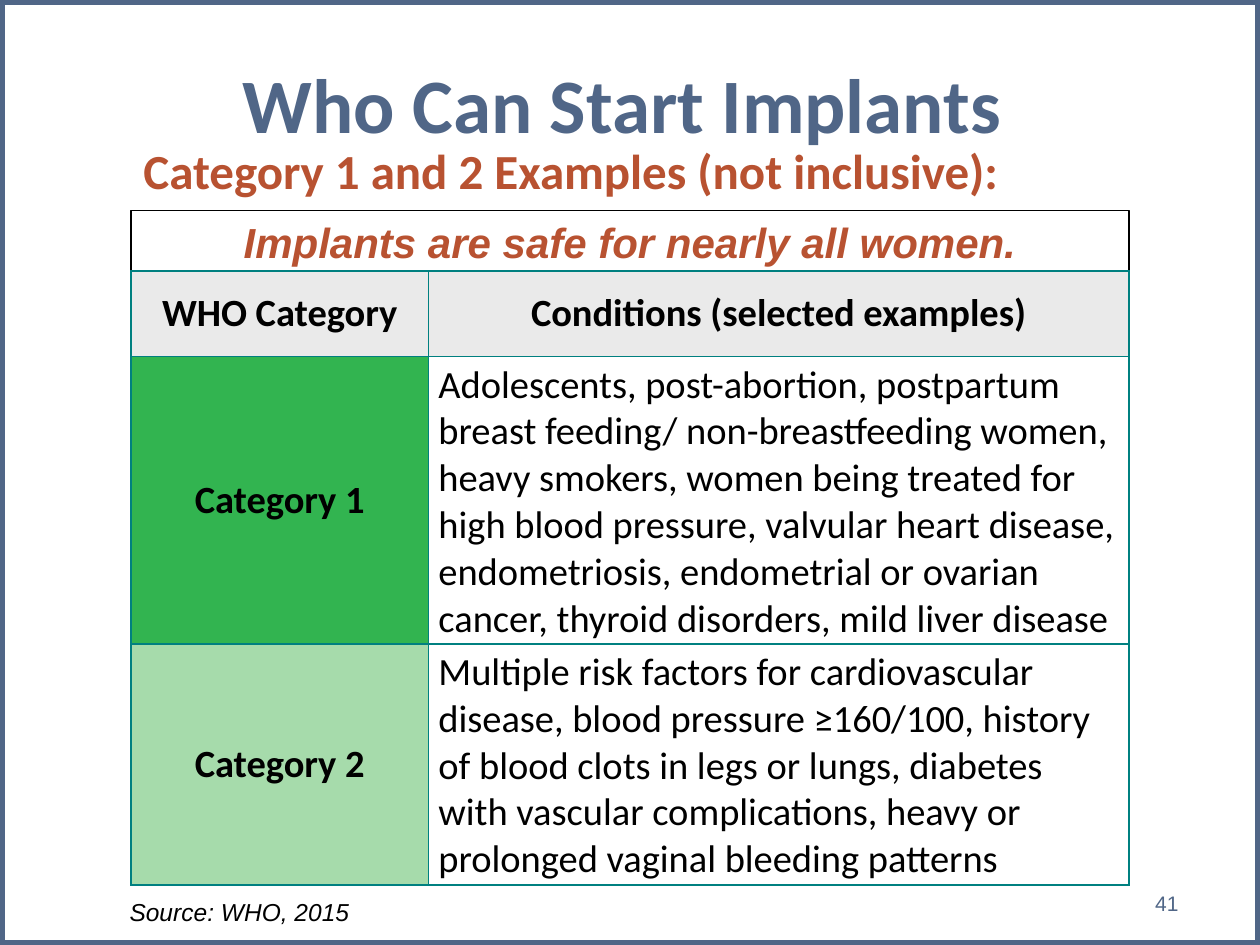
"""Build the slide on who can start implants."""
from dataclasses import dataclass

from lxml import etree
from pptx import Presentation
from pptx.dml.color import RGBColor
from pptx.enum.shapes import MSO_SHAPE
from pptx.enum.text import MSO_ANCHOR, PP_ALIGN
from pptx.oxml.ns import qn
from pptx.util import Inches, Pt

LEFT, CENTER = PP_ALIGN.LEFT, PP_ALIGN.CENTER
TOP, MIDDLE = MSO_ANCHOR.TOP, MSO_ANCHOR.MIDDLE
RECT = MSO_SHAPE.RECTANGLE
BLUE, RUST, BLACK, TEAL = "506687", "B85231", "000000", "008080"
EDGE, WIDTH = 1.04, 7.92


@dataclass
class Style:
    size: float
    color: str = BLACK
    font: str = "Calibri"
    bold: bool = False
    italic: bool = False
    align: PP_ALIGN = LEFT
    anchor: MSO_ANCHOR = TOP
    spacing: float = 1.0


@dataclass
class Row:
    height: float
    label: str
    text: str
    fill: str


ROWS = [
    Row(2.28, "Category 1",
        "Adolescents, post-abortion, postpartum breast feeding/ non-breastfeeding "
        "women, heavy smokers, women being treated for high blood pressure, "
        "valvular heart disease, endometriosis, endometrial or ovarian cancer, "
        "thyroid disorders, mild liver disease", "32B450"),
    Row(1.91, "Category 2",
        "Multiple risk factors for cardiovascular disease, blood pressure "
        "≥160/100, history of blood clots in legs or lungs, diabetes with vascular "
        "complications, heavy or prolonged vaginal bleeding patterns", "A6DBAB"),
]
HEAD = Style(22, bold=True, align=CENTER, anchor=MIDDLE)
BODY = Style(22, anchor=MIDDLE)


def rgb(code: str) -> RGBColor:
    return RGBColor.from_string(code)


def write(frame, text: str, style: Style) -> None:
    frame.text = text
    frame.word_wrap = True
    frame.vertical_anchor = style.anchor
    para = frame.paragraphs[0]
    para.alignment = style.align
    para.line_spacing = style.spacing
    font = para.runs[0].font
    font.name, font.size = style.font, Pt(style.size)
    font.bold, font.italic = style.bold, style.italic
    font.color.rgb = rgb(style.color)


def add_text(slide, box: tuple, text: str, style: Style) -> None:
    shape = slide.shapes.add_textbox(*map(Inches, box))
    write(shape.text_frame, text, style)


def add_box(slide, box: tuple, color: str, width: float):
    shape = slide.shapes.add_shape(RECT, *map(Inches, box))
    shape.shadow.inherit = False
    shape.fill.background()
    shape.line.color.rgb = rgb(color)
    shape.line.width = Pt(width)
    return shape


def set_cell(cell, text: str, style: Style, fill: str = "") -> None:
    cell.margin_left = cell.margin_right = Inches(0.08)
    cell.margin_top = cell.margin_bottom = Inches(0.04)
    write(cell.text_frame, text, style)
    cell.vertical_anchor = style.anchor
    props = cell._tc.get_or_add_tcPr()
    for side in ("lnL", "lnR", "lnT", "lnB"):
        line = etree.SubElement(props, qn(f"a:{side}"), w=str(Pt(1)))
        solid = etree.SubElement(line, qn("a:solidFill"))
        etree.SubElement(solid, qn("a:srgbClr"), val=TEAL)
    if fill:
        cell.fill.solid()
        cell.fill.fore_color.rgb = rgb(fill)
    else:
        cell.fill.background()


def add_grid(slide) -> None:
    heights = [0.68] + [row.height for row in ROWS]
    box = (EDGE, 2.15, WIDTH, sum(heights))
    table = slide.shapes.add_table(len(heights), 2, *map(Inches, box)).table
    table.first_row = table.horz_banding = False
    for col, width in zip(table.columns, (2.36, 5.56)):
        col.width = Inches(width)
    for line, height in zip(table.rows, heights):
        line.height = Inches(height)
    for col, text in enumerate(("WHO Category", "Conditions (selected examples)")):
        set_cell(table.cell(0, col), text, HEAD, "EAEAEA")
    for num, row in enumerate(ROWS, 1):
        set_cell(table.cell(num, 0), row.label, HEAD, row.fill)
        set_cell(table.cell(num, 1), row.text, BODY)


def main() -> None:
    deck = Presentation()
    deck.slide_width, deck.slide_height = Inches(10), Inches(7.5)
    slide = deck.slides.add_slide(deck.slide_layouts[5])
    title = slide.shapes.title
    title.left, title.top = Inches(0.44), Inches(0.19)
    title.width, title.height = Inches(9), Inches(1.25)
    write(title.text_frame, "Who Can Start Implants",
          Style(44, BLUE, bold=True, align=CENTER, anchor=MIDDLE))
    add_text(slide, (EDGE, 0.71, WIDTH, 1.32),
             "Category 1 and 2 Examples (not inclusive):",
             Style(28, RUST, bold=True, anchor=MIDDLE, spacing=0.95))
    banner = add_box(slide, (EDGE, 1.67, WIDTH, 0.5), BLACK, 0.75)
    write(banner.text_frame, "Implants are safe for nearly all women.",
          Style(24, RUST, "Arial", bold=True, italic=True, align=CENTER))
    add_text(slide, (0.93, 7.1, 5.33, 0.27), "Source: WHO, 2015",
             Style(14, font="Arial", italic=True, spacing=0.9))
    add_text(slide, (9.07, 7.02, 0.68, 0.3), "41", Style(12, BLUE, "Arial"))
    add_box(slide, (0, 0, 10, 7.5), BLUE, 5.25)
    add_grid(slide)
    deck.save("out.pptx")


if __name__ == "__main__":
    main()
